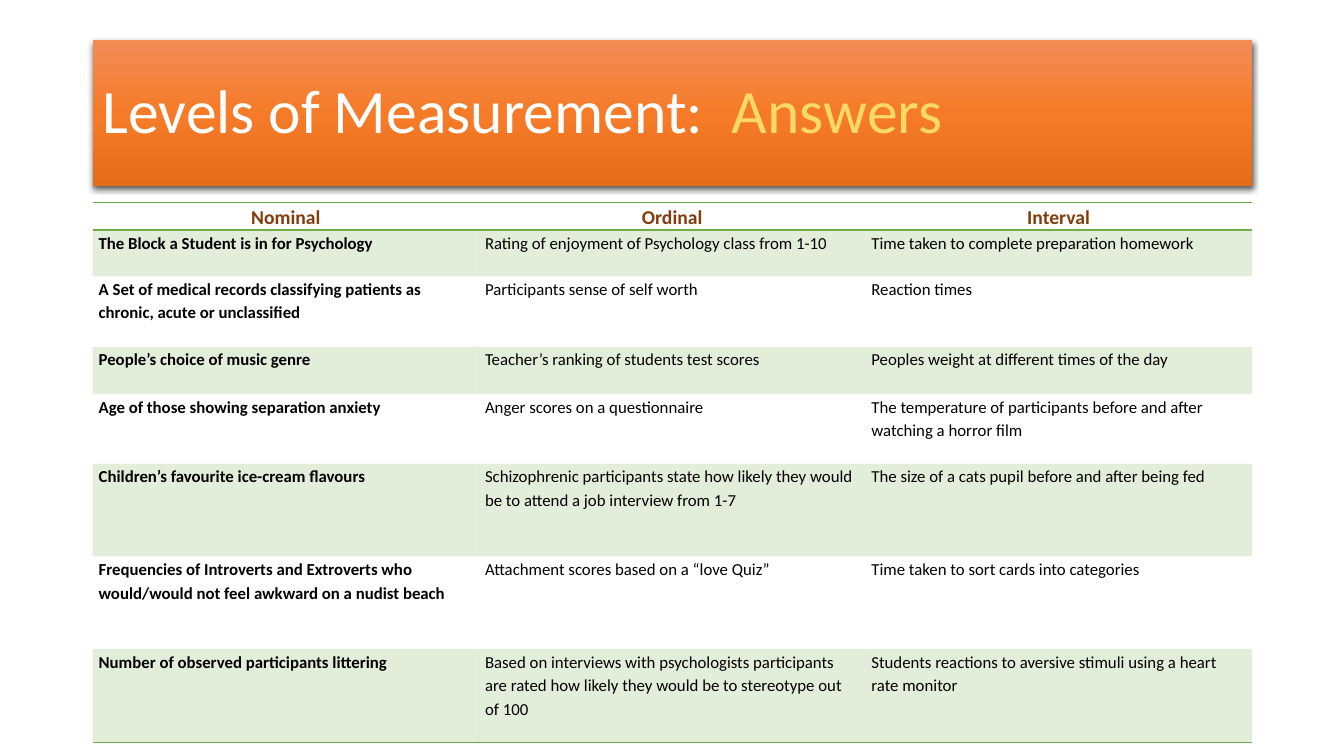
from lxml import etree
from pptx import Presentation
from pptx import util as u
from pptx.dml.color import RGBColor
from pptx.enum import shapes, text
from pptx.oxml import parse_xml
from pptx.oxml.ns import nsdecls, qn

WHITE = RGBColor(0xFF, 0xFF, 0xFF)
BLACK = RGBColor(0x00, 0x00, 0x00)
YELLOW = RGBColor(0xFF, 0xD9, 0x66)
BROWN = RGBColor(0x84, 0x3C, 0x0B)
GREEN = RGBColor(0x70, 0xAD, 0x47)
BANNER_STOPS = [
    (0, RGBColor(0xF1, 0x8C, 0x57)),
    (50, RGBColor(0xF6, 0x7B, 0x28)),
    (100, RGBColor(0xE5, 0x6C, 0x19)),
]
PLAIN_TABLE_STYLE = "{2D5ABB26-0587-4C30-8999-92F81FD0307C}"

LEFT, WIDTH = 66.2, 828
ROW_HEIGHTS = [16.6, 33.1, 50.4, 33.8, 49.7, 66.2, 66.2, 67]
LEVELS = [
    ("Nominal", "Ordinal", "Interval"),
    ("The Block a Student is in for Psychology",
     "Rating of enjoyment of Psychology class from 1-10",
     "Time taken to complete preparation homework"),
    ("A Set of medical records classifying patients as chronic, acute or unclassified",
     "Participants sense of self worth",
     "Reaction times"),
    ("People’s choice of music genre",
     "Teacher’s ranking of students test scores",
     "Peoples weight at different times of the day"),
    ("Age of those showing separation anxiety",
     "Anger scores on a questionnaire",
     "The temperature of participants before and after watching a horror film"),
    ("Children’s favourite ice-cream flavours",
     "Schizophrenic participants state how likely they would be to attend a job interview from 1-7",
     "The size of a cats pupil before and after being fed"),
    ("Frequencies of Introverts and Extroverts who would/would not feel awkward on a nudist beach",
     "Attachment scores based on a “love Quiz”",
     "Time taken to sort cards into categories"),
    ("Number of observed participants littering",
     "Based on interviews with psychologists participants are rated how likely they would be to stereotype out of 100",
     "Students reactions to aversive stimuli using a heart rate monitor"),
]


class SlideBuilder:
    font_name = "Calibri"

    def __init__(self, slide):
        self.slide = slide

    def style_run(self, run, size, color, bold=False):
        run.font.name = self.font_name
        run.font.size = u.Pt(size)
        run.font.bold = bold
        run.font.color.rgb = color

    def banner(self, left, top, width, height, parts):
        shape = self.slide.shapes.add_shape(
            shapes.MSO_SHAPE.RECTANGLE,
            u.Pt(left), u.Pt(top), u.Pt(width), u.Pt(height))
        shape.line.fill.background()
        self.gradient(shape, BANNER_STOPS)
        self.drop_shadow(shape)
        frame = shape.text_frame
        frame.word_wrap = True
        frame.vertical_anchor = text.MSO_ANCHOR.MIDDLE
        paragraph = frame.paragraphs[0]
        paragraph.alignment = text.PP_ALIGN.LEFT
        paragraph.line_spacing = 0.9
        for words, color in parts:
            run = paragraph.add_run()
            run.text = words
            self.style_run(run, 44, color)

    def gradient(self, shape, stops):
        shape.fill.gradient()
        shape.fill.gradient_angle = 270  # counter-clockwise: top to bottom
        stop_list = shape.fill._fill._gradFill.find(qn("a:gsLst"))
        for stop in list(stop_list):
            stop_list.remove(stop)
        for position, color in stops:
            stop = etree.SubElement(stop_list, qn("a:gs"), pos=str(position * 1000))
            etree.SubElement(stop, qn("a:srgbClr"), val=str(color))

    def drop_shadow(self, shape):
        shape.shadow.inherit = False
        effects = shape._element.spPr.find(qn("a:effectLst"))
        effects.append(parse_xml(
            f'<a:outerShdw {nsdecls("a")} blurRad="{u.Pt(4.5)}" dist="{u.Pt(1.5)}" '
            f'dir="5400000" algn="ctr" rotWithShape="0"><a:srgbClr val="{BLACK}">'
            '<a:alpha val="63000"/></a:srgbClr></a:outerShdw>'))

    def table(self, left, top, width, row_heights, rows):
        columns = len(rows[0])
        frame = self.slide.shapes.add_table(
            len(rows), columns, u.Pt(left), u.Pt(top),
            u.Pt(width), u.Pt(sum(row_heights)))
        table = frame.table
        table.horz_banding = False
        table._tbl.tblPr.find(qn("a:tableStyleId")).text = PLAIN_TABLE_STYLE
        for column in table.columns:
            column.width = u.Pt(width / columns)
        last = len(rows) - 1
        for i, (height, labels) in enumerate(zip(row_heights, rows)):
            table.rows[i].height = u.Pt(height)
            sides = {0: ("lnT", "lnB"), last: ("lnB",)}.get(i, ())
            for j, label in enumerate(labels):
                cell = table.cell(i, j)
                self.cell_text(cell, label, header=i == 0, bold=i == 0 or j == 0)
                for side in sides:
                    self.cell_border(cell, side)
                self.cell_fill(cell, banded=i % 2 == 1)

    def cell_text(self, cell, label, header, bold):
        cell.margin_left = cell.margin_right = u.Pt(4.3)
        cell.margin_top = cell.margin_bottom = 0
        cell.text_frame.text = label
        paragraph = cell.text_frame.paragraphs[0]
        paragraph.line_spacing = 1.15
        paragraph.alignment = text.PP_ALIGN.CENTER if header else text.PP_ALIGN.LEFT
        size, color = (14, BROWN) if header else (12, BLACK)
        self.style_run(paragraph.runs[0], size, color, bold)

    def cell_border(self, cell, side):
        cell._tc.get_or_add_tcPr().append(parse_xml(
            f'<a:{side} {nsdecls("a")} w="{u.Pt(1)}"><a:solidFill>'
            f'<a:srgbClr val="{GREEN}"/></a:solidFill></a:{side}>'))

    def cell_fill(self, cell, banded):
        if not banded:
            cell.fill.background()
            return
        cell.fill.solid()
        cell.fill.fore_color.rgb = GREEN
        color = cell._tc.tcPr.find(qn("a:solidFill")).find(qn("a:srgbClr"))
        etree.SubElement(color, qn("a:alpha"), val="20000")


def main():
    presentation = Presentation()
    presentation.slide_width = u.Pt(960)
    presentation.slide_height = u.Pt(540)
    builder = SlideBuilder(presentation.slides.add_slide(presentation.slide_layouts[6]))

    # Title banner
    builder.banner(LEFT, 28.8, WIDTH, 104.4,
                   [("Levels of Measurement:  ", WHITE), ("Answers", YELLOW)])

    # Answers sorted by level of measurement
    builder.table(LEFT, 144.7, WIDTH, ROW_HEIGHTS, LEVELS)

    presentation.save("out.pptx")


if __name__ == "__main__":
    main()
